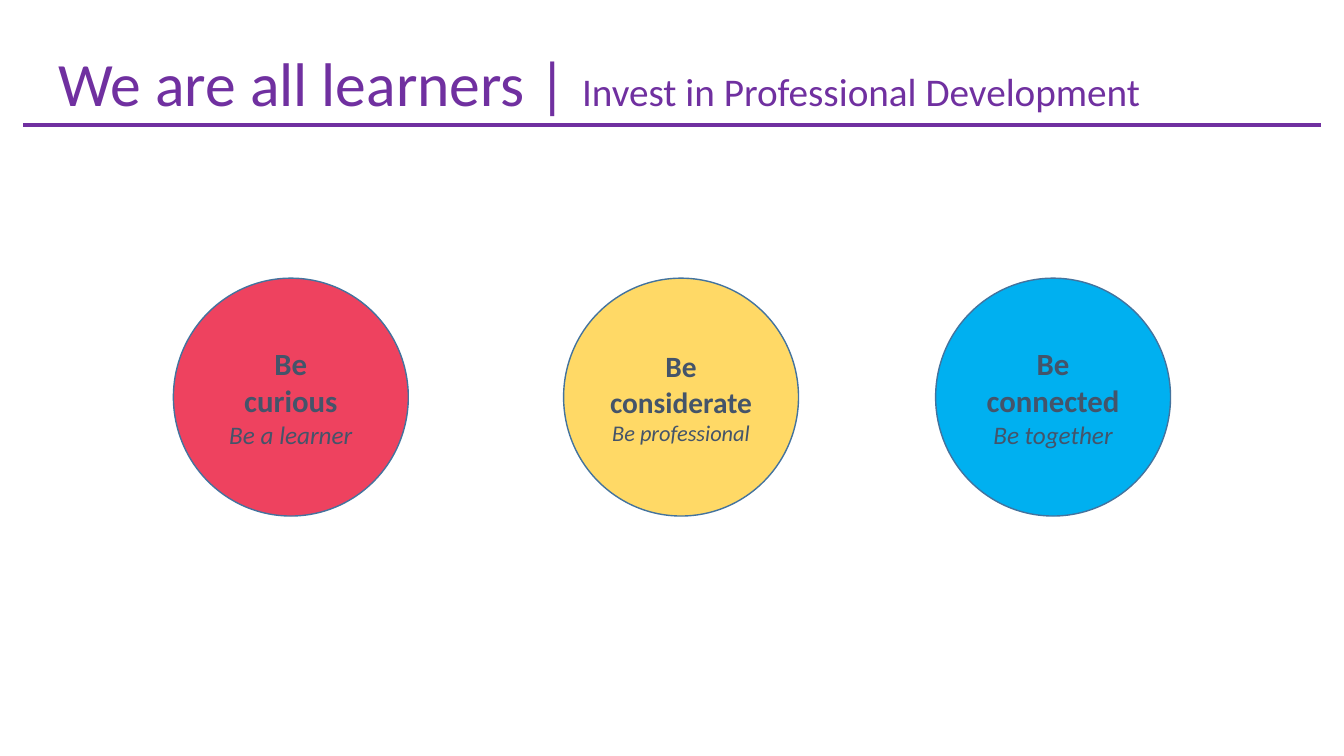
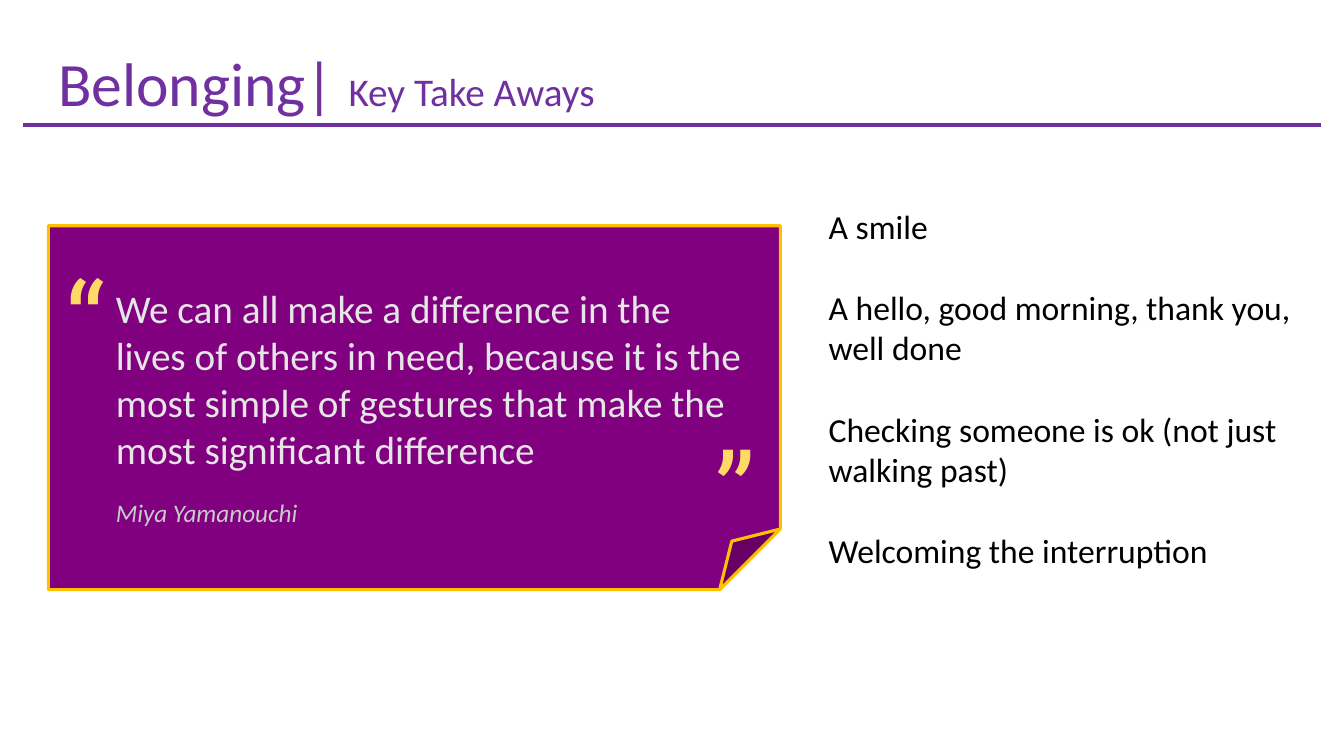
import pptx
import pptx.util
import pptx.dml.color
import pptx.enum.shapes
import pptx.enum.text
import pptx.oxml.ns
import lxml.etree

Inches, Pt = pptx.util.Inches, pptx.util.Pt
RGBColor = pptx.dml.color.RGBColor
MSO_SHAPE = pptx.enum.shapes.MSO_SHAPE
PP_ALIGN = pptx.enum.text.PP_ALIGN

PURPLE = RGBColor(0x70, 0x30, 0xA0)
PLUM = RGBColor(0x80, 0x00, 0x80)
GOLD = RGBColor(0xFF, 0xC0, 0x00)
RED = RGBColor(0xEE, 0x42, 0x5F)
YELLOW = RGBColor(0xFF, 0xD9, 0x66)
BLUE = RGBColor(0x00, 0xB0, 0xF0)
OUTLINE = RGBColor(0x43, 0x73, 0x9E)
SLATE = RGBColor(0x44, 0x54, 0x6A)
PALE_GREY = RGBColor(0xE7, 0xE6, 0xE6)
GREY = RGBColor(0xC9, 0xC9, 0xC9)
BLACK = RGBColor(0, 0, 0)


def add_text(paragraph, text, size, color, font="Calibri", bold=False, italic=False,
             align=PP_ALIGN.LEFT, before=0):
    """Append a formatted run to the paragraph."""
    paragraph.alignment = align
    paragraph.space_before = Pt(before)
    run = paragraph.add_run()
    run.text = text
    run.font.name = font
    run.font.size = Pt(size)
    run.font.color.rgb = color
    run.font.bold = bold
    run.font.italic = italic


def add_box(slide, left, top, width, height, preset=None, fill=None, line=None, line_width=1):
    """Add a text box, or a filled and outlined shape when a preset is given."""
    place = [Inches(length) for length in (left, top, width, height)]
    if preset is None:
        box = slide.shapes.add_textbox(*place)
    else:
        box = slide.shapes.add_shape(preset, *place)
        box.shadow.inherit = False
        box.fill.solid()
        box.fill.fore_color.rgb = fill
        box.line.color.rgb = line
        box.line.width = Pt(line_width)
    box.text_frame.word_wrap = True
    return box


prs = pptx.Presentation()
prs.slide_width, prs.slide_height = Inches(13.33), Inches(7.5)

# Title and rule shared by both slides
slides = []
for topic, subtitle in [
    ("We are all learners | ", "Invest in Professional Development"),
    ("Belonging| ", "Key Take Aways"),
]:
    slide = prs.slides.add_slide(prs.slide_layouts[6])
    rule = slide.shapes.add_connector(pptx.enum.shapes.MSO_CONNECTOR.STRAIGHT, Inches(0.23),
                                      Inches(1.24), Inches(13.1), Inches(1.24))
    rule.line.color.rgb = PURPLE
    rule.line.width = Pt(3)
    lxml.etree.SubElement(rule.line._get_or_add_ln().getparent(),
                          pptx.oxml.ns.qn("a:effectLst"))
    title = add_box(slide, 0.48, 0.4, 12.41, 0.84).text_frame.paragraphs[0]
    add_text(title, topic, 44, PURPLE)
    add_text(title, subtitle, 28, PURPLE)
    slides.append(slide)
learners, belonging = slides

# Three values
for left, fill, value_lines, motto, value_size, motto_size in [
    (1.72, RED, ["Be", "curious"], "Be a learner", 22, 18),
    (5.59, YELLOW, ["Be considerate"], "Be professional", 21, 16),
    (9.28, BLUE, ["Be connected"], "Be together", 22, 18),
]:
    circle = add_box(learners, left, 2.76, 2.33, 2.36, MSO_SHAPE.OVAL, fill, OUTLINE)
    frame = circle.text_frame
    frame.vertical_anchor = pptx.enum.text.MSO_ANCHOR.MIDDLE
    paragraph = frame.paragraphs[0]
    for value in value_lines:
        add_text(paragraph, value, value_size, SLATE, bold=True, align=PP_ALIGN.CENTER)
        paragraph = frame.add_paragraph()
    add_text(paragraph, motto, motto_size, SLATE, italic=True, align=PP_ALIGN.CENTER)

# Key take aways
takeaways = add_box(belonging, 8.12, 1.99, 4.98, 4.95).text_frame
for index, takeaway in enumerate([
    "A smile",
    "A hello, good morning, thank you, well done",
    "Checking someone is ok (not just walking past)",
    "Welcoming the interruption",
]):
    paragraph = takeaways.add_paragraph() if index else takeaways.paragraphs[0]
    add_text(paragraph, takeaway, 24, BLACK, before=29.3 if index else 0)

# Quotation card
add_box(belonging, 0.48, 2.24, 7.26, 3.61, MSO_SHAPE.FOLDED_CORNER, PLUM, GOLD, 2.25)
quotation = add_box(belonging, 1.05, 2.77, 6.43, 1.99)
add_text(quotation.text_frame.paragraphs[0],
         "We can all make a difference in the lives of others in need, because it is the "
         "most simple of gestures that make the most significant difference", 28, PALE_GREY)
author = add_box(belonging, 1.05, 4.88, 6.43, 0.32)
add_text(author.text_frame.paragraphs[0], "Miya Yamanouchi", 18, GREY, italic=True)
for left, top, rotation in [(7.11, 3.88, 180), (0.55, 2.45, 0)]:
    quote_mark = add_box(belonging, left, top, 0.49, 1.16)
    quote_mark.rotation = rotation
    add_text(quote_mark.text_frame.paragraphs[0], "“", 80, YELLOW, font="Roboto")

prs.save("out.pptx")
